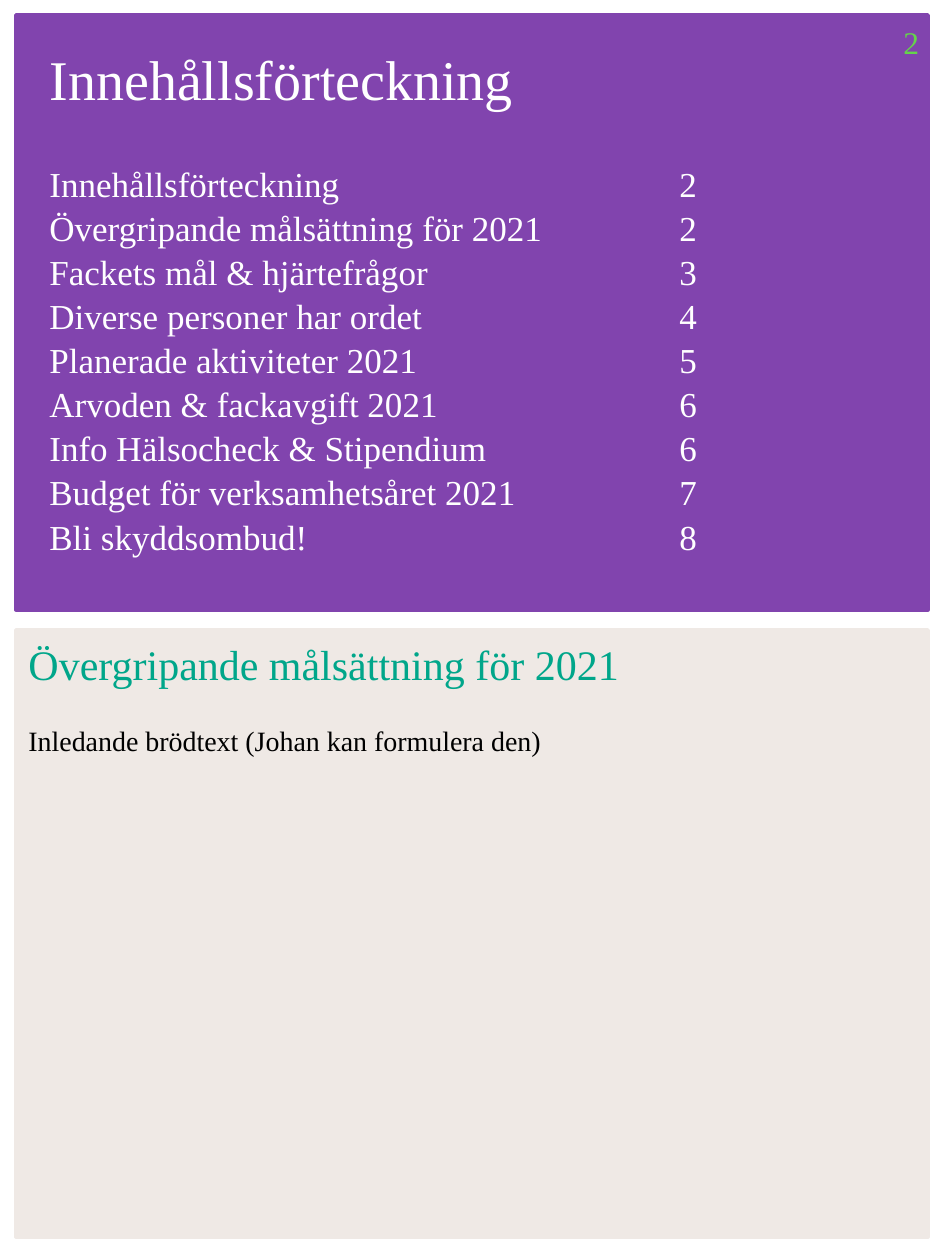
from dataclasses import dataclass

import pptx
import pptx.dml.color
import pptx.enum.shapes
import pptx.enum.text
import pptx.oxml
import pptx.oxml.ns
import pptx.util

RGBColor = pptx.dml.color.RGBColor
Align = pptx.enum.text.PP_ALIGN

PURPLE = RGBColor(0x81, 0x44, 0xAE)
SAND = RGBColor(0xEF, 0xE9, 0xE5)
TEAL = RGBColor(0x00, 0xA6, 0x8A)
GREEN = RGBColor(0x65, 0xD4, 0x4A)
WHITE = RGBColor(0xFF, 0xFF, 0xFF)
BLACK = RGBColor(0x00, 0x00, 0x00)

FONT = "Times New Roman"
PX_PER_INCH = 126
PAGE_TAB = 630


@dataclass(frozen=True)
class Box:
    left: int
    top: int
    width: int
    height: int


@dataclass(frozen=True)
class Entry:
    heading: str
    page: int


ENTRIES = [
    Entry("Innehållsförteckning", 2),
    Entry("Övergripande målsättning för 2021", 2),
    Entry("Fackets mål & hjärtefrågor", 3),
    Entry("Diverse personer har ordet", 4),
    Entry("Planerade aktiviteter 2021", 5),
    Entry("Arvoden & fackavgift 2021", 6),
    Entry("Info Hälsocheck & Stipendium", 6),
    Entry("Budget för verksamhetsåret 2021", 7),
    Entry("Bli skyddsombud!", 8),
]


def px(length: int) -> int:
    return pptx.util.Emu(round(length * 914400 / PX_PER_INCH))


def place(box: Box) -> tuple[int, int, int, int]:
    return px(box.left), px(box.top), px(box.width), px(box.height)


def add_panel(slide, box: Box, color: RGBColor):
    panel = slide.shapes.add_shape(pptx.enum.shapes.MSO_SHAPE.RECTANGLE, *place(box))
    panel.shadow.inherit = False
    panel.fill.solid()
    panel.fill.fore_color.rgb = color
    panel.line.color.rgb = color
    panel.line.width = pptx.util.Pt(2)
    return panel


def prepare_frame(shape):
    frame = shape.text_frame
    frame.word_wrap = True
    frame.auto_size = pptx.enum.text.MSO_AUTO_SIZE.NONE
    frame.vertical_anchor = pptx.enum.text.MSO_ANCHOR.TOP
    return frame


def add_text_box(slide, box: Box):
    return prepare_frame(slide.shapes.add_textbox(*place(box)))


def write(frame, text: str, *, size: int, color: RGBColor, align=Align.LEFT,
          before: int = 0, tab: int = 0) -> None:
    paragraph = frame.paragraphs[0] if not frame.text else frame.add_paragraph()
    paragraph.alignment = align
    paragraph.line_spacing = 1.05
    paragraph.space_before = pptx.util.Pt(before)
    if tab:
        namespace = pptx.oxml.ns.nsdecls("a")
        stops = pptx.oxml.parse_xml(
            f'<a:tabLst {namespace}><a:tab pos="{px(tab)}" algn="l"/></a:tabLst>'
        )
        paragraph.element.get_or_add_pPr().append(stops) if hasattr(
            paragraph, "element"
        ) else paragraph._p.get_or_add_pPr().append(stops)
    run = paragraph.add_run()
    run.text = text
    run.font.name = FONT
    run.font.size = pptx.util.Pt(size)
    run.font.color.rgb = color


def main() -> None:
    presentation = pptx.Presentation()
    presentation.slide_width = pptx.util.Inches(7.5)
    presentation.slide_height = pptx.util.Inches(10)
    slide = presentation.slides.add_slide(presentation.slide_layouts[5])

    contents_panel = add_panel(slide, Box(16, 15, 912, 595), PURPLE)

    title = slide.shapes.title
    title.left, title.top, title.width, title.height = place(Box(37, 35, 496, 81))
    contents_panel.element.addnext(title.element)
    write(prepare_frame(title), "Innehållsförteckning", size=32, color=WHITE)

    contents = add_text_box(slide, Box(37, 154, 843, 425))
    for entry in ENTRIES:
        write(contents, f"{entry.heading}\t{entry.page}", size=20, color=WHITE, tab=PAGE_TAB)

    goals_panel = add_panel(slide, Box(16, 630, 912, 607), SAND)
    goals = prepare_frame(goals_panel)
    write(goals, "Övergripande målsättning för 2021", size=24, color=TEAL)
    write(goals, "Inledande brödtext (Johan kan formulera den)", size=16, color=BLACK,
          align=Align.JUSTIFY, before=19)

    page_number = add_text_box(slide, Box(891, 15, 39, 50))
    write(page_number, "2", size=18, color=GREEN)

    presentation.save("out.pptx")


if __name__ == "__main__":
    main()
